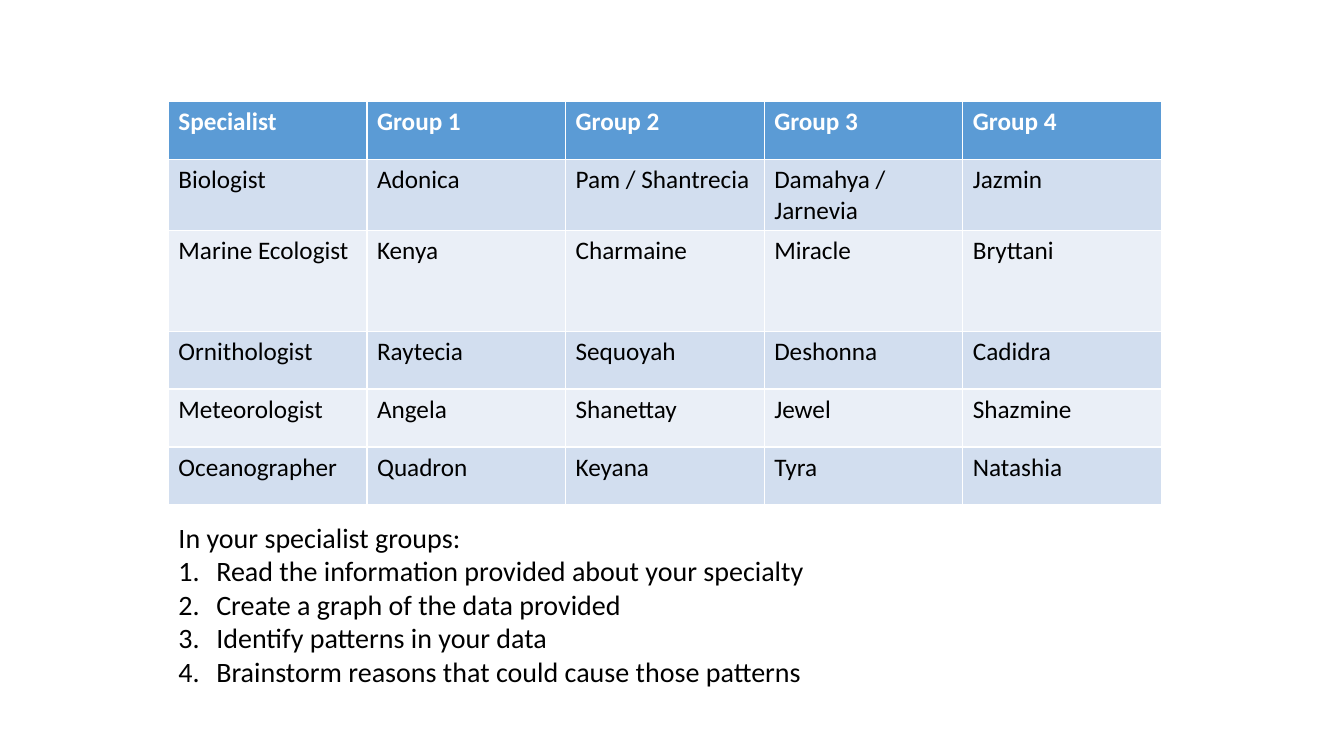
from dataclasses import dataclass

from lxml.etree import SubElement
from pptx import Presentation
from pptx.dml.color import RGBColor
from pptx.enum.text import MSO_ANCHOR, MSO_AUTO_SIZE
from pptx.oxml.ns import qn
from pptx.util import Inches, Pt

FONT = "Calibri"
HEADER_FILL = "5B9BD5"
BAND_FILLS = ("D2DEEF", "EAEFF7")
COLUMN_WIDTH = 1.97
ROW_HEIGHT = 0.575
TALL_ROW_HEIGHT = 1


@dataclass
class Row:
    cells: list[str]
    height: float = ROW_HEIGHT


ROWS = [
    Row(["Specialist", "Group 1", "Group 2", "Group 3", "Group 4"]),
    Row(["Biologist", "Adonica", "Pam / Shantrecia", "Damahya / Jarnevia", "Jazmin"]),
    Row(["Marine Ecologist", "Kenya", "Charmaine", "Miracle", "Bryttani"], TALL_ROW_HEIGHT),
    Row(["Ornithologist", "Raytecia", "Sequoyah", "Deshonna", "Cadidra"]),
    Row(["Meteorologist", "Angela", "Shanettay", "Jewel", "Shazmine"]),
    Row(["Oceanographer", "Quadron", "Keyana", "Tyra", "Natashia"]),
]

INTRO = "In your specialist groups:"
STEPS = [
    "Read the information provided about your specialty",
    "Create a graph of the data provided",
    "Identify patterns in your data",
    "Brainstorm reasons that could cause those patterns",
]


def rgb(value: str) -> RGBColor:
    return RGBColor.from_string(value)


def add_run(p, text: str, size: float, color: str = "000000", bold: bool = False) -> None:
    r = p.add_run()
    r.text = text
    r.font.name = FONT
    r.font.size = Pt(size)
    r.font.bold = bold
    r.font.color.rgb = rgb(color)


def set_bullet(p, numbered: bool) -> None:
    indent = Inches(0.375) if numbered else 0
    pPr = p._p.get_or_add_pPr()
    pPr.set("marL", str(indent))
    pPr.set("indent", str(-indent))
    if numbered:
        SubElement(pPr, qn("a:buFont"), typeface="+mj-lt")
        SubElement(pPr, qn("a:buAutoNum"), type="arabicPeriod")
    else:
        SubElement(pPr, qn("a:buNone"))


def add_group_table(s, rows: list[Row]) -> None:
    columns = len(rows[0].cells)
    table = s.shapes.add_table(
        len(rows), columns, Inches(1.67), Inches(1.01),
        Inches(COLUMN_WIDTH * columns), Inches(sum(row.height for row in rows)),
    ).table
    for column in table.columns:
        column.width = Inches(COLUMN_WIDTH)
    for i, row in enumerate(rows):
        header = i == 0
        table.rows[i].height = Inches(row.height)
        for j, text in enumerate(row.cells):
            cell = table.cell(i, j)
            cell.fill.solid()
            cell.fill.fore_color.rgb = rgb(HEADER_FILL if header else BAND_FILLS[(i - 1) % 2])
            add_run(cell.text_frame.paragraphs[0], text, 18,
                    "FFFFFF" if header else "000000", header)


def fill_instructions(sp, intro: str, steps: list[str]) -> None:
    sp.left, sp.top = Inches(1.67), Inches(5.11)
    sp.width, sp.height = Inches(10), Inches(1.78)
    tf = sp.text_frame
    tf.word_wrap = True
    tf.auto_size = MSO_AUTO_SIZE.SHAPE_TO_FIT_TEXT
    tf.vertical_anchor = MSO_ANCHOR.TOP
    for i, text in enumerate([intro, *steps]):
        p = tf.add_paragraph() if i else tf.paragraphs[0]
        set_bullet(p, numbered=i > 0)
        p.space_before = Pt(0)
        add_run(p, text, 20)


def main() -> None:
    """Build the specialist groups slide."""
    prs = Presentation()
    prs.slide_width, prs.slide_height = Inches(13.33), Inches(7.5)
    s = prs.slides.add_slide(prs.slide_layouts[1])
    title = s.shapes.title.element
    title.getparent().remove(title)
    add_group_table(s, ROWS)
    fill_instructions(s.placeholders[1], INTRO, STEPS)
    prs.save("out.pptx")


if __name__ == "__main__":
    main()
